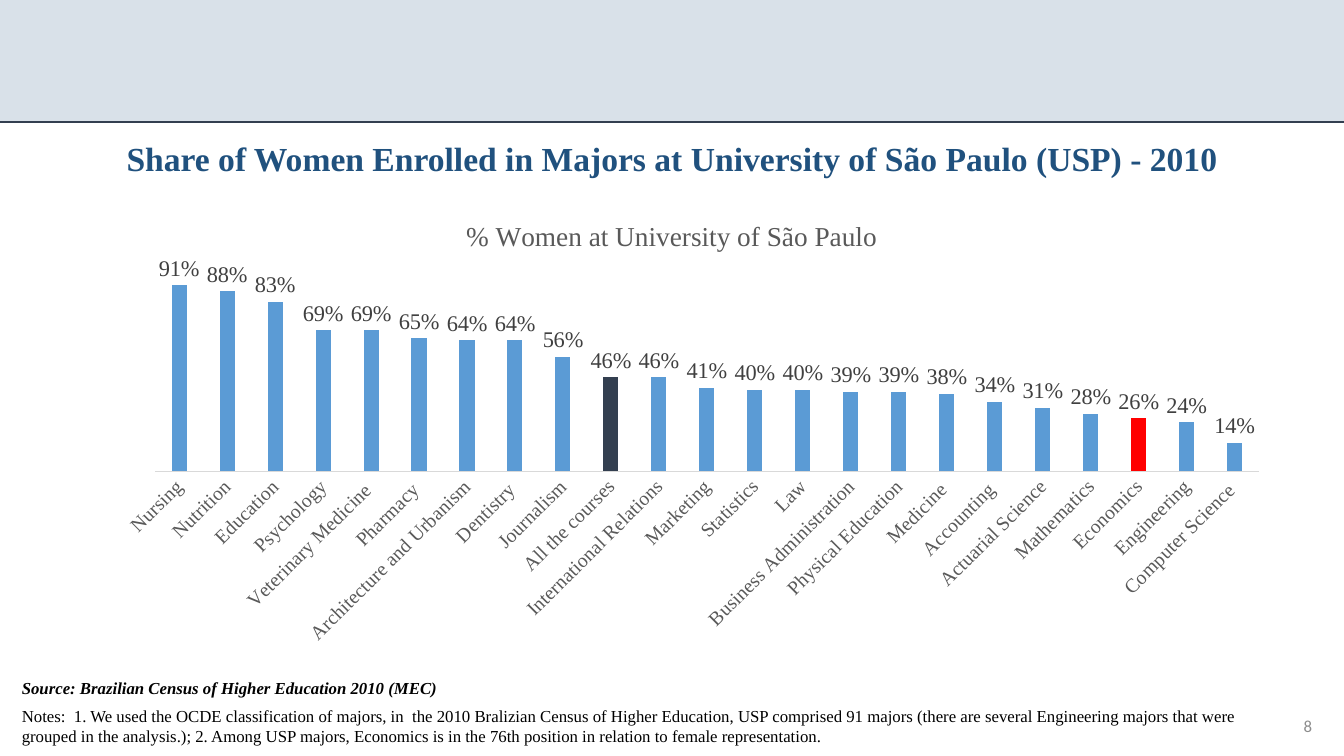
from pptx import Presentation
from pptx.chart.data import CategoryChartData
from pptx.dml.color import RGBColor
from pptx.enum.chart import XL_CHART_TYPE, XL_LABEL_POSITION, XL_TICK_MARK
from pptx.enum.shapes import MSO_CONNECTOR, MSO_SHAPE
from pptx.enum.text import MSO_ANCHOR, MSO_AUTO_SIZE, PP_ALIGN
from pptx.oxml import parse_xml
from pptx.oxml.ns import nsdecls, qn
from pptx.util import Cm, Pt
from lxml import etree

COLORS = {
    "title": "20517E", "dark": "333F50", "black": "000000", "page": "8C8C8C",
    "bar": "5B9BD5", "highlight": "FF0000", "label": "404040",
    "axis_text": "595959", "axis_line": "D9D9D9",
}
SERIF = "Times New Roman"
WIDTH, HEIGHT, BAND = 33.87, 19.05, 3.07

WOMEN_SHARE = {
    "Nursing": 0.91, "Nutrition": 0.88, "Education": 0.83, "Psychology": 0.69,
    "Veterinary Medicine ": 0.69, "Pharmacy ": 0.65,
    "Architecture and Urbanism": 0.64, "Dentistry ": 0.64, "Journalism": 0.56,
    "All the courses": 0.46, "International Relations": 0.46,
    "Marketing": 0.41, "Statistics": 0.4, "Law": 0.4,
    "Business Administration": 0.39, "Physical Education": 0.39,
    "Medicine ": 0.38, "Accounting ": 0.34, "Actuarial Science": 0.31,
    "Mathematics": 0.28, "Economics": 0.26, "Engineering": 0.24,
    "Computer Science ": 0.14,
}
NOTES = (
    "Notes:  1. We used the OCDE classification of majors, in  the 2010 Bralizian "
    "Census of Higher Education, USP comprised 91 majors (there are several "
    "Engineering majors that were grouped in the analysis.); 2. Among USP majors, "
    "Economics is in the 76th position in relation to female representation."
)


def rgb(name):
    return RGBColor.from_string(COLORS[name])


def set_font(font, color, **formats):
    for key, value in formats.items():
        setattr(font, key, value)
    font.color.rgb = rgb(color)


def set_layout(parent, index, **values):
    """Give a chart part a manual layout, as fractions of the chart."""
    for old in parent.findall(qn("c:layout")):
        parent.remove(old)
    items = "".join(f'<c:{key} val="{value}"/>' for key, value in values.items())
    parent.insert(index, parse_xml(
        f'<c:layout {nsdecls("c")}><c:manualLayout>{items}</c:manualLayout></c:layout>'))


class Slide:
    def __init__(self, prs):
        self.s = prs.slides.add_slide(prs.slide_layouts[6])

    def band(self, x, y, w, h, color, opacity):
        sp = self.s.shapes.add_shape(MSO_SHAPE.RECTANGLE, Cm(x), Cm(y), Cm(w), Cm(h))
        sp.shadow.inherit = False
        sp.line.fill.background()
        sp.fill.solid()
        sp.fill.fore_color.rgb = rgb(color)
        clr = sp.fill._xPr.find(".//" + qn("a:srgbClr"))
        etree.SubElement(clr, qn("a:alpha")).set("val", str(opacity * 1000))

    def line(self, x1, y1, x2, y2, color, width):
        cxn = self.s.shapes.add_connector(
            MSO_CONNECTOR.STRAIGHT, Cm(x1), Cm(y1), Cm(x2), Cm(y2))
        cxn.line.color.rgb = rgb(color)
        cxn.line.width = Pt(width)
        etree.SubElement(cxn._element.spPr, qn("a:effectLst"))

    def text(self, x, y, w, h, text, color="black", size=12, name=SERIF,
             align=PP_ALIGN.LEFT, grow=True, **formats):
        tf = self.s.shapes.add_textbox(Cm(x), Cm(y), Cm(w), Cm(h)).text_frame
        tf.word_wrap = True
        if grow:
            tf.auto_size = MSO_AUTO_SIZE.SHAPE_TO_FIT_TEXT
        else:
            tf.vertical_anchor = MSO_ANCHOR.MIDDLE
        p = tf.paragraphs[0]
        p.alignment = align
        r = p.add_run()
        r.text = text
        set_font(r.font, color, name=name, size=Pt(size), **formats)

    def column_chart(self, x, y, w, h, title, shares, accents):
        data = CategoryChartData(number_format="0%")
        data.categories = list(shares)
        data.add_series("Series 1", list(shares.values()))
        chart = self.s.shapes.add_chart(
            XL_CHART_TYPE.COLUMN_CLUSTERED, Cm(x), Cm(y), Cm(w), Cm(h), data).chart
        set_font(chart.font, "black", name=SERIF, size=Pt(16))
        chart.has_legend = False

        chart.has_title = True
        p = chart.chart_title.text_frame.paragraphs[0]
        r = p.add_run()
        r.text = title
        set_font(r.font, "axis_text", name=SERIF, size=Pt(19.5), bold=False)
        chart.chart_title.include_in_layout = False
        set_layout(chart.chart_title._element, 1,
                   xMode="edge", yMode="edge", x=0.323, y=0.033)
        set_layout(chart._chartSpace.chart.plotArea, 0, layoutTarget="inner",
                   xMode="edge", yMode="edge", x=0.066, y=0.144, w=0.927, h=0.43)

        axis = chart.value_axis
        axis.visible = axis.has_major_gridlines = False
        axis.minimum_scale, axis.maximum_scale = 0, 1
        axis = chart.category_axis
        axis.major_tick_mark = axis.minor_tick_mark = XL_TICK_MARK.NONE
        axis.format.line.color.rgb = rgb("axis_line")
        axis.format.line.width = Pt(0.75)
        set_font(axis.tick_labels.font, "axis_text", name=SERIF, size=Pt(14))
        axis._element.find(".//" + qn("a:bodyPr")).set("rot", "-2700000")

        plot = chart.plots[0]
        plot.gap_width, plot.overlap = 219, -27
        plot.vary_by_categories = False
        series = plot.series[0]
        series.format.fill.solid()
        series.format.fill.fore_color.rgb = rgb("bar")
        for category, color in accents.items():
            fill = series.points[list(shares).index(category)].format.fill
            fill.solid()
            fill.fore_color.rgb = rgb(color)
        labels = series.data_labels
        formats = {"show_value": True, "number_format": "0%",
                   "number_format_is_linked": False,
                   "position": XL_LABEL_POSITION.OUTSIDE_END}
        for key, value in formats.items():
            setattr(labels, key, value)
        set_font(labels.font, "label", name=SERIF, size=Pt(16))


def main():
    prs = Presentation()
    prs.slide_width, prs.slide_height = Cm(WIDTH), Cm(HEIGHT)
    slide = Slide(prs)
    slide.band(0, 0, WIDTH, BAND, "title", 17)
    slide.line(0, BAND, WIDTH, BAND, "dark", 1.5)
    slide.text(0.3, 16.95, 11.5, 0.77,
               "Source: Brazilian Census of Higher Education 2010 (MEC)",
               bold=True, italic=True)
    slide.text(25.7, 17.78, 7.62, 1.02, "8", "page", name="Calibri",
               align=PP_ALIGN.RIGHT, grow=False)
    slide.text(0.3, 17.65, 32.08, 1.28, NOTES)
    slide.text(0.3, 3.35, 33.27, 1.28,
               "Share of Women Enrolled in Majors at University of São Paulo (USP) - 2010",
               "title", size=24, align=PP_ALIGN.CENTER, bold=True)
    slide.column_chart(1.93, 5, 30, 11.99, "% Women at University of São Paulo",
                       WOMEN_SHARE, {"All the courses": "dark", "Economics": "highlight"})
    prs.save("out.pptx")


if __name__ == "__main__":
    main()
